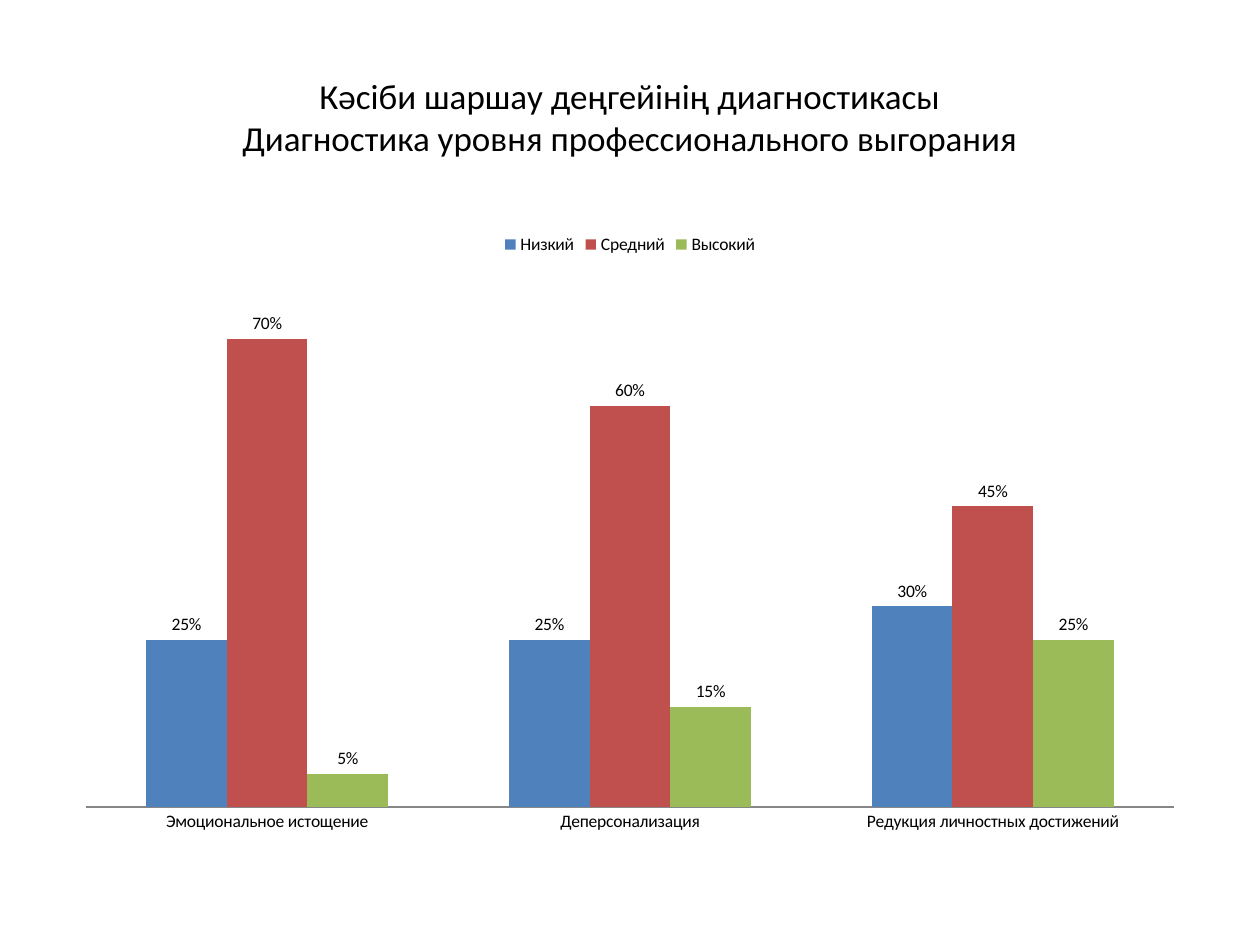
"""Build a slide with a clustered column chart of professional burnout levels."""
from dataclasses import dataclass

from pptx import Presentation
from pptx.chart.data import CategoryChartData
from pptx.dml.color import RGBColor
from pptx.enum import chart as charts, text
from pptx.util import Pt

TITLE = "Кәсіби шаршау деңгейінің диагностикасы\vДиагностика уровня профессионального выгорания"
CATEGORIES = ["Эмоциональное истощение", "Деперсонализация", "Редукция личностных достижений"]
LEVELS = [
    ("Низкий", (0.25, 0.25, 0.3)),
    ("Средний", (0.7, 0.6, 0.45)),
    ("Высокий", (0.05, 0.15, 0.25)),
]


@dataclass(frozen=True)
class Theme:
    font: str = "Calibri"
    ink: str = "000000"
    axis: str = "868686"
    levels: tuple = ("4F81BD", "C0504D", "9BBB59")
    title_size: int = 20
    chart_size: int = 10


THEME = Theme()
SLIDE_WIDTH, SLIDE_HEIGHT, MARGIN = 720, 540, 36
CONTENT_WIDTH = SLIDE_WIDTH - 2 * MARGIN
TITLE_BOX = (MARGIN, 21.6, CONTENT_WIDTH, 90)
CHART_BOX = (MARGIN, 126, CONTENT_WIDTH, 356.4)


def format_font(font, size, color=THEME.ink):
    font.name = THEME.font
    font.size = Pt(size)
    font.bold = False
    font.color.rgb = RGBColor.from_string(color)


def write_text(shape, content, size, align=text.PP_ALIGN.CENTER, anchor=text.MSO_ANCHOR.MIDDLE):
    frame = shape.text_frame
    frame.word_wrap = True
    frame.vertical_anchor = anchor
    paragraph = frame.paragraphs[0]
    paragraph.text = content
    paragraph.alignment = align
    for run in paragraph.runs:
        format_font(run.font, size)


def add_title(slide):
    title = slide.shapes.title
    title.left, title.top, title.width, title.height = map(Pt, TITLE_BOX)
    write_text(title, TITLE, THEME.title_size)


def format_axes(chart):
    category_axis, value_axis = chart.category_axis, chart.value_axis
    category_axis.major_tick_mark = charts.XL_TICK_MARK.NONE
    category_axis.format.line.color.rgb = RGBColor.from_string(THEME.axis)
    category_axis.format.line.width = Pt(0.75)
    value_axis.visible = False
    value_axis.has_major_gridlines = False
    value_axis.minimum_scale, value_axis.maximum_scale = 0, 0.8


def format_series(series, color):
    series.format.fill.solid()
    series.format.fill.fore_color.rgb = RGBColor.from_string(color)
    series.smooth = False
    labels = series.data_labels
    labels.show_value = True
    labels.number_format = "0%"
    labels.number_format_is_linked = False
    labels.position = charts.XL_LABEL_POSITION.OUTSIDE_END


def add_burnout_chart(slide):
    data = CategoryChartData(number_format="0%")
    data.categories = CATEGORIES
    for name, values in LEVELS:
        data.add_series(name, values)
    frame = slide.shapes.add_chart(
        charts.XL_CHART_TYPE.COLUMN_CLUSTERED, *map(Pt, CHART_BOX), data
    )
    chart = frame.chart
    format_font(chart.font, THEME.chart_size)
    chart.has_title = False
    chart.has_legend = True
    chart.legend.position = charts.XL_LEGEND_POSITION.TOP
    chart.legend.include_in_layout = False
    format_axes(chart)
    plot = chart.plots[0]
    plot.gap_width = 150
    plot.overlap = 0
    plot.vary_by_categories = False
    for series, color in zip(plot.series, THEME.levels):
        format_series(series, color)


def main():
    presentation = Presentation()
    presentation.slide_width, presentation.slide_height = Pt(SLIDE_WIDTH), Pt(SLIDE_HEIGHT)
    slide = presentation.slides.add_slide(presentation.slide_layouts[5])
    add_title(slide)
    add_burnout_chart(slide)
    presentation.save("out.pptx")


if __name__ == "__main__":
    main()
